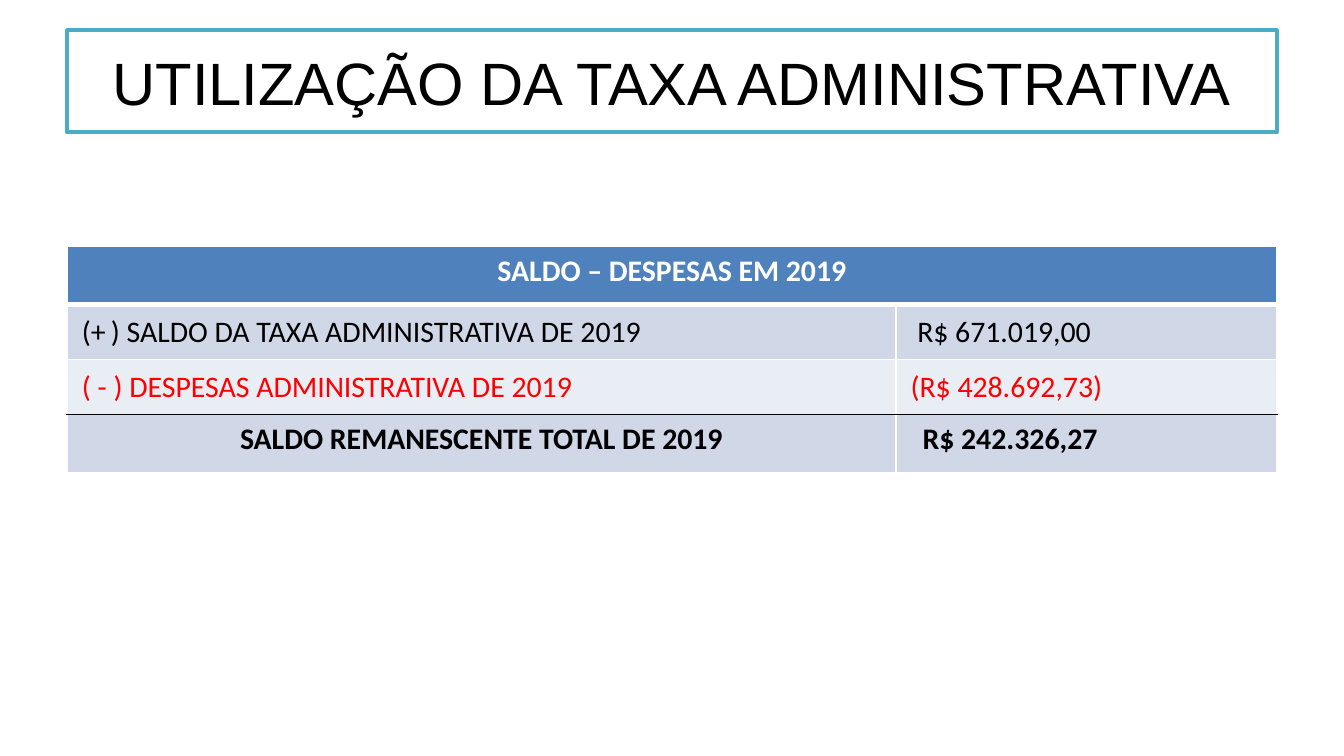
import pptx
import pptx.dml.color
import pptx.enum.shapes
import pptx.enum.text
import pptx.oxml
import pptx.oxml.ns
import pptx.util

RGB = pptx.dml.color.RGBColor
ALIGN = pptx.enum.text.PP_ALIGN
ANCHOR = pptx.enum.text.MSO_ANCHOR

PX = 4572  # EMU, 200 px to the inch
WHITE = RGB(0xFF, 0xFF, 0xFF)
BLACK = RGB(0x00, 0x00, 0x00)
RED = RGB(0xFF, 0x00, 0x00)
TEAL = RGB(0x4B, 0xAC, 0xC6)
BLUE = RGB(0x4F, 0x81, 0xBD)
MIST = RGB(0xD0, 0xD8, 0xE8)
PALE = RGB(0xE9, 0xED, 0xF4)

COLS = [1233, 567]
ROWS = [87, 82, 82, 87]
BODY = {"name": "Calibri", "size": pptx.util.Pt(16), "bold": False}
BOLD = {**BODY, "bold": True}
SMALL = {**BODY, "size": pptx.util.Pt(12)}
MID = {"vertical_anchor": ANCHOR.MIDDLE, "margin_top": 2 * PX,
       "margin_right": 2 * PX, "margin_bottom": 0}
TOP = {"vertical_anchor": ANCHOR.TOP}


def scale(box):
    return [n * PX for n in box]


def apply(obj, form):
    for key, val in form.items():
        setattr(obj, key, val)


def write(par, runs, color, align):
    """Fill a paragraph with (text, font format) runs of one colour."""
    par.alignment = align
    for text, form in runs:
        run = par.add_run()
        run.text = text
        apply(run.font, form)
        run.font.color.rgb = color


def edge(cell, sides):
    """Draw cell borders from {side: (colour, points)}."""
    props = cell._tc.get_or_add_tcPr()
    for i, side in enumerate("LRTB"):
        color, width = sides.get(side, (WHITE, 1))
        props.insert(i, pptx.oxml.parse_xml(
            f'<a:ln{side} {pptx.oxml.ns.nsdecls("a")} w="{pptx.util.Pt(width)}">'
            f'<a:solidFill><a:srgbClr val="{color}"/></a:solidFill></a:ln{side}>'))


def title(slide, box, text):
    rect = slide.shapes.add_shape(
        pptx.enum.shapes.MSO_SHAPE.RECTANGLE, *scale(box))
    rect.shadow.inherit = False
    rect.fill.solid()
    rect.fill.fore_color.rgb = WHITE
    rect.line.color.rgb = TEAL
    rect.line.width = pptx.util.Pt(2)
    apply(rect.text_frame,
          {"word_wrap": True, "vertical_anchor": ANCHOR.MIDDLE})
    form = {"name": "Arial", "size": pptx.util.Pt(32)}
    write(rect.text_frame.paragraphs[0], [(text, form)], BLACK, ALIGN.CENTER)


def balance(slide, box):
    grid = slide.shapes.add_table(len(ROWS), len(COLS), *scale(box)).table
    apply(grid, {"first_row": False, "horz_banding": False})
    for col, wide in zip(grid.columns, COLS):
        col.width = wide * PX
    for row, high in zip(grid.rows, ROWS):
        row.height = high * PX

    plus = [("(+", BODY), (" ", SMALL),
            (") SALDO DA TAXA ADMINISTRATIVA DE 2019", BODY)]
    minus = [("( - ) DESPESAS ADMINISTRATIVA DE 2019", BODY)]
    rule = (BLACK, 1)
    # fill, text colour, borders, cell format, then (runs, align, left px)
    lines = [
        (BLUE, WHITE, {"B": (WHITE, 3)}, TOP,
         [([("SALDO – DESPESAS EM 2019", BOLD)], ALIGN.CENTER, 20),
          ([], ALIGN.LEFT, 20)]),
        (MIST, BLACK, {"T": (WHITE, 3)}, MID,
         [(plus, ALIGN.LEFT, 22),
          ([("R$ 671.019,00", BODY)], ALIGN.LEFT, 32)]),
        (PALE, RED, {"B": rule}, MID,
         [(minus, ALIGN.LEFT, 22),
          ([("(R$ 428.692,73)", BODY)], ALIGN.LEFT, 22)]),
        (MIST, BLACK, {"T": rule}, TOP,
         [([("SALDO REMANESCENTE TOTAL DE 2019", BOLD)], ALIGN.CENTER, 20),
          ([("R$ 242.326,27", BOLD)], ALIGN.LEFT, 40)]),
    ]
    for r, (fill, color, sides, form, cells) in enumerate(lines):
        for c, (runs, align, left) in enumerate(cells):
            cell = grid.cell(r, c)
            apply(cell, {**form, "margin_left": left * PX})
            cell.fill.solid()
            cell.fill.fore_color.rgb = fill
            edge(cell, sides)
            write(cell.text_frame.paragraphs[0], runs, color, align)
    grid.cell(0, 0).merge(grid.cell(0, 1))


def main():
    deck = pptx.Presentation()
    apply(deck, {"slide_width": 2000 * PX, "slide_height": 1125 * PX})
    slide = deck.slides.add_slide(deck.slide_layouts[6])
    title(slide, (100, 45, 1800, 152), "UTILIZAÇÃO DA TAXA ADMINISTRATIVA")
    balance(slide, (100, 366, sum(COLS), sum(ROWS)))
    deck.save("out.pptx")


if __name__ == "__main__":
    main()
